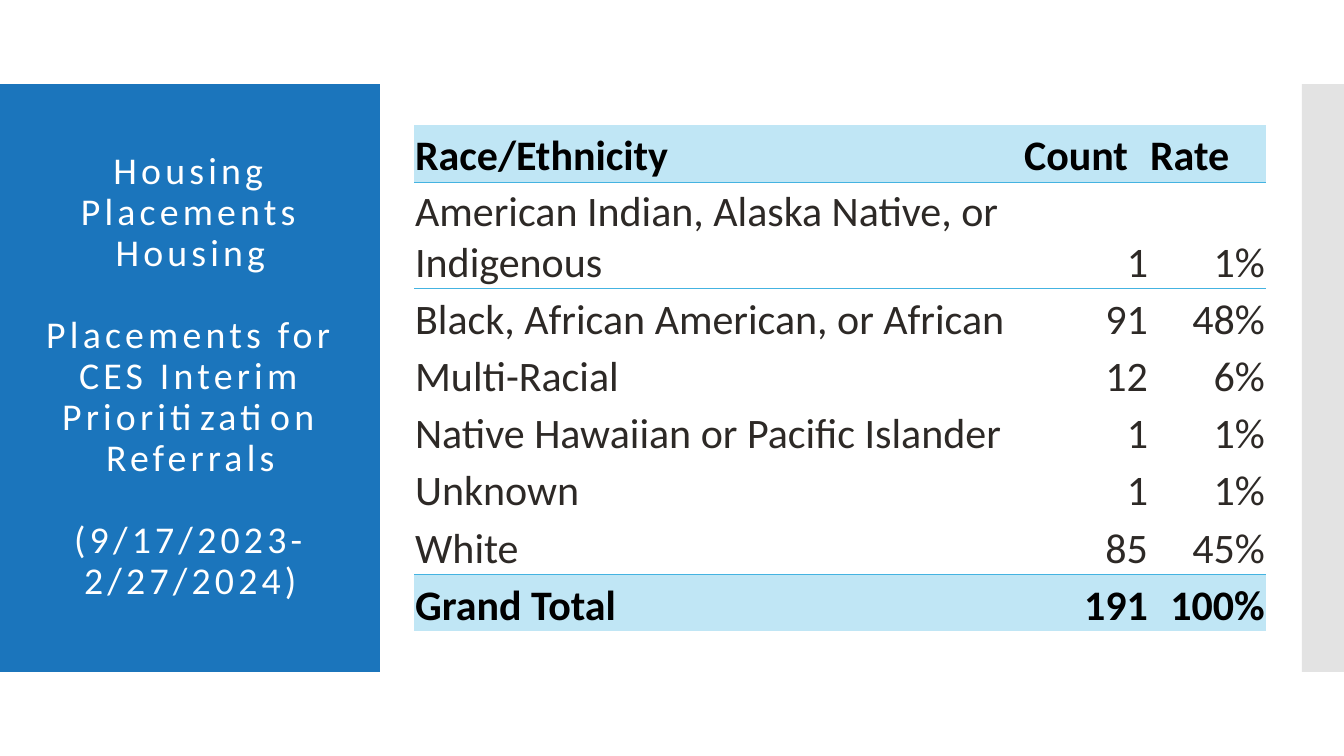
from typing import NamedTuple

import lxml.etree
import pptx
import pptx.dml.color
import pptx.enum.shapes
import pptx.enum.text
import pptx.oxml.ns
import pptx.util

Pt = pptx.util.Pt
RGBColor = pptx.dml.color.RGBColor
PP_ALIGN = pptx.enum.text.PP_ALIGN
MSO_ANCHOR = pptx.enum.text.MSO_ANCHOR
qn = pptx.oxml.ns.qn

BLUE = RGBColor(0x1B, 0x75, 0xBC)
GRAY = RGBColor(0xC8, 0xC8, 0xC8)
WHITE = RGBColor(0xFF, 0xFF, 0xFF)
BLACK = RGBColor(0x00, 0x00, 0x00)
INK = RGBColor(0x2D, 0x29, 0x26)
PALE_BLUE = RGBColor(0xC0, 0xE6, 0xF5)
RULE_BLUE = RGBColor(0x44, 0xB3, 0xE1)
FONT = "Calibri"
NO_GRID_STYLE = "{2D5ABB26-0587-4C30-8999-92F81FD0307C}"


class Panel(NamedTuple):
    left: float
    width: float
    color: RGBColor
    opacity: int


class Row(NamedTuple):
    label: str
    count: str
    rate: str
    height: float = 40.8
    strong: bool = False
    borders: tuple[str, ...] = ()


PANELS = [Panel(0, 271.3, BLUE, 100), Panel(930, 30, GRAY, 50)]
TITLE = [
    "Housing Placements Housing",
    "Placements for CES Interim Prioritization Referrals",
    "(9/17/2023-2/27/2024)",
]
COLUMN_WIDTHS = [435, 90, 83.5]
ROWS = [
    Row("Race/Ethnicity", "Count", "Rate", strong=True, borders=("lnB",)),
    Row("American Indian, Alaska Native, or Indigenous", "1", "1%", 76.2, borders=("lnT",)),
    Row("Black, African American, or African", "91", "48%"),
    Row("Multi-Racial", "12", "6%"),
    Row("Native Hawaiian or Pacific Islander", "1", "1%"),
    Row("Unknown", "1", "1%"),
    Row("White", "85", "45%", borders=("lnB",)),
    Row("Grand Total", "191", "100%", strong=True, borders=("lnT",)),
]


def draw_panel(s: pptx.slide.Slide, panel: Panel) -> None:
    sp = s.shapes.add_shape(
        pptx.enum.shapes.MSO_SHAPE.RECTANGLE,
        Pt(panel.left), Pt(60), Pt(panel.width), Pt(420))
    sp.shadow.inherit = False
    sp.line.fill.background()
    sp.fill.solid()
    sp.fill.fore_color.rgb = panel.color
    if panel.opacity < 100:
        color = sp.element.spPr.find(qn("a:solidFill"))[0]
        lxml.etree.SubElement(color, qn("a:alpha"), val=str(panel.opacity * 1000))


def format_runs(p: pptx.text.text._Paragraph, size: float, color: RGBColor, bold: bool) -> None:
    for r in p.runs:
        r.font.name = FONT
        r.font.size = Pt(size)
        r.font.color.rgb = color
        r.font.bold = bold


def draw_title(s: pptx.slide.Slide) -> None:
    sp = s.shapes.title
    s.shapes.element.append(sp.element)  # in front of the blue panel
    sp.left, sp.top, sp.width, sp.height = Pt(20), Pt(88.5), Pt(232), Pt(362)
    tf = sp.text_frame
    tf.text = "\n".join(TITLE)
    tf.word_wrap = True
    tf.auto_size = pptx.enum.text.MSO_AUTO_SIZE.NONE
    tf.vertical_anchor = MSO_ANCHOR.MIDDLE
    for i, p in enumerate(tf.paragraphs):
        p.alignment = PP_ALIGN.CENTER
        p.line_spacing = 0.9
        p.space_before = Pt(29.5 if i else 0)
        format_runs(p, 27, WHITE, False)
        for r in p.runs:
            r.font._element.set("spc", "300")


def add_border(cell: pptx.table._Cell, side: str) -> None:
    tc_pr = cell._tc.get_or_add_tcPr()
    ln = lxml.etree.SubElement(tc_pr, qn(f"a:{side}"), w=str(Pt(0.5)))
    fill = lxml.etree.SubElement(ln, qn("a:solidFill"))
    lxml.etree.SubElement(fill, qn("a:srgbClr"), val=str(RULE_BLUE))


def draw_cell(cell: pptx.table._Cell, text: str, row: Row, right: bool) -> None:
    cell.margin_left = cell.margin_right = cell.margin_top = Pt(0.75)
    cell.margin_bottom = 0
    cell.vertical_anchor = MSO_ANCHOR.BOTTOM
    for side in row.borders:
        add_border(cell, side)
    if row.strong:
        cell.fill.solid()
        cell.fill.fore_color.rgb = PALE_BLUE
    else:
        cell.fill.background()
    p = cell.text_frame.paragraphs[0]
    p.text = text
    p.alignment = PP_ALIGN.RIGHT if right else PP_ALIGN.LEFT
    format_runs(p, 30, BLACK if row.strong else INK, row.strong)


def draw_table(s: pptx.slide.Slide) -> None:
    frame = s.shapes.add_table(
        len(ROWS), len(COLUMN_WIDTHS), Pt(295.8), Pt(89.3),
        Pt(sum(COLUMN_WIDTHS)), Pt(sum(row.height for row in ROWS)))
    table = frame.table
    table.horz_banding = False
    table.first_row = False
    frame.element.find(".//" + qn("a:tableStyleId")).text = NO_GRID_STYLE
    for column, width in zip(table.columns, COLUMN_WIDTHS):
        column.width = Pt(width)
    for i, row in enumerate(ROWS):
        table.rows[i].height = Pt(row.height)
        for j, text in enumerate((row.label, row.count, row.rate)):
            draw_cell(table.cell(i, j), text, row, right=i > 0 and j > 0)


def main() -> None:
    prs = pptx.Presentation()
    prs.slide_width, prs.slide_height = Pt(960), Pt(540)
    s = prs.slides.add_slide(prs.slide_layouts[5])

    # Side panels
    for panel in PANELS:
        draw_panel(s, panel)

    # Title on the blue panel
    draw_title(s)

    # Placements by race and ethnicity
    draw_table(s)

    prs.save("out.pptx")


if __name__ == "__main__":
    main()
